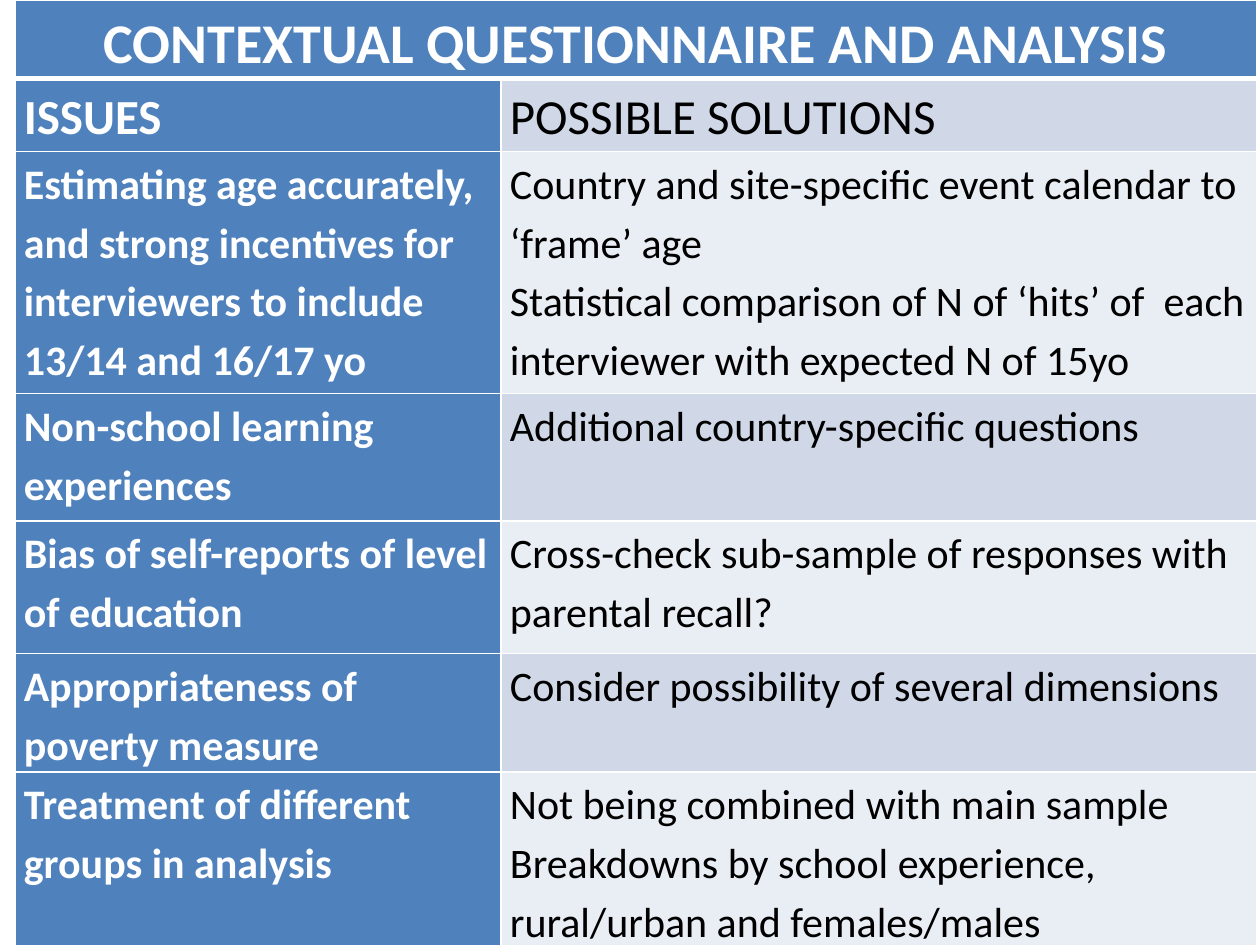
from lxml import etree
from pptx import Presentation
from pptx import util as u
from pptx.dml.color import RGBColor
from pptx.enum import text
from pptx.oxml.ns import qn

TITLE = "CONTEXTUAL QUESTIONNAIRE AND ANALYSIS"
ROWS = [
    ("ISSUES", ["POSSIBLE SOLUTIONS"]),
    ("Estimating age accurately, and strong incentives for interviewers to include 13/14 and 16/17 yo",
     ["Country and site-specific event calendar to ‘frame’ age",
      "Statistical comparison of N of ‘hits’ of  each interviewer with expected N of 15yo"]),
    ("Non-school learning experiences", ["Additional country-specific questions"]),
    ("Bias of self-reports of level of education",
     ["Cross-check sub-sample of responses with parental recall?"]),
    ("Appropriateness of poverty measure", ["Consider possibility of several dimensions"]),
    ("Treatment of different groups in analysis",
     ["Not being combined with main sample",
      "Breakdowns by school experience, rural/urban and females/males"]),
]
COL_WIDTHS = [9.8, 15.24]
ROW_HEIGHTS = [1.57, 1.47, 4.88, 2.57, 2.67, 2.39, 3.71]


def rgb(value):
    return RGBColor.from_string(value)


def write(tf, lines, size=24, color="000000", bold=False, align=text.PP_ALIGN.LEFT, font="Calibri"):
    for i, line in enumerate(lines):
        p = tf.add_paragraph() if i else tf.paragraphs[0]
        p.alignment = align
        p.line_spacing = 1.15
        r = p.add_run()
        r.text = line
        r.font.name = font
        r.font.size = u.Pt(size)
        r.font.bold = bold
        r.font.color.rgb = rgb(color)


class Deck:
    """Holds the table style and the current slide."""

    accent, white = "4F81BD", "FFFFFF"
    bands = ["E9EDF4", "D0D8E8"]

    def __init__(self, prs):
        self.s = prs.slides.add_slide(prs.slide_layouts[6])

    def table(self, rows, left, top, widths, heights):
        frame = self.s.shapes.add_table(rows, len(widths), u.Cm(left), u.Cm(top),
                                        u.Cm(sum(widths)), u.Cm(sum(heights)))
        tbl = frame.table
        for col, width in zip(tbl.columns, widths):
            col.width = u.Cm(width)
        for row, height in zip(tbl.rows, heights):
            row.height = u.Cm(height)
        return tbl

    def cell(self, cell, lines, fill, top=1, bottom=1, **fmt):
        cell.margin_left = cell.margin_right = u.Cm(0.18)
        cell.margin_top = cell.margin_bottom = 0
        cell.fill.solid()
        cell.fill.fore_color.rgb = rgb(fill)
        self.borders(cell, {"L": 1, "R": 1, "T": top, "B": bottom})
        write(cell.text_frame, lines, **fmt)

    def borders(self, cell, widths):
        tcPr = cell._tc.get_or_add_tcPr()
        for i, (side, width) in enumerate(widths.items()):
            ln = etree.Element(qn("a:ln" + side), w=str(u.Pt(width)))
            fill = etree.SubElement(ln, qn("a:solidFill"))
            etree.SubElement(fill, qn("a:srgbClr"), val=self.white)
            tcPr.insert(i, ln)


def main():
    prs = Presentation()
    prs.slide_width, prs.slide_height = u.Cm(25.4), u.Cm(19.05)
    deck = Deck(prs)
    tbl = deck.table(len(ROWS) + 1, 0.3, 0, COL_WIDTHS, ROW_HEIGHTS)
    tbl.cell(0, 0).merge(tbl.cell(0, 1))
    for col, lines in enumerate([[TITLE], []]):
        deck.cell(tbl.cell(0, col), lines, deck.accent, bottom=3, size=32,
                  color=deck.white, bold=True, align=text.PP_ALIGN.CENTER)
    for i, (issue, solutions) in enumerate(ROWS, 1):
        size, top = (28, 3) if i == 1 else (24, 1)
        deck.cell(tbl.cell(i, 0), [issue], deck.accent, top=top, size=size,
                  color=deck.white, bold=True)
        deck.cell(tbl.cell(i, 1), solutions, deck.bands[i % 2], top=top, size=size)
    prs.save("out.pptx")


if __name__ == "__main__":
    main()
